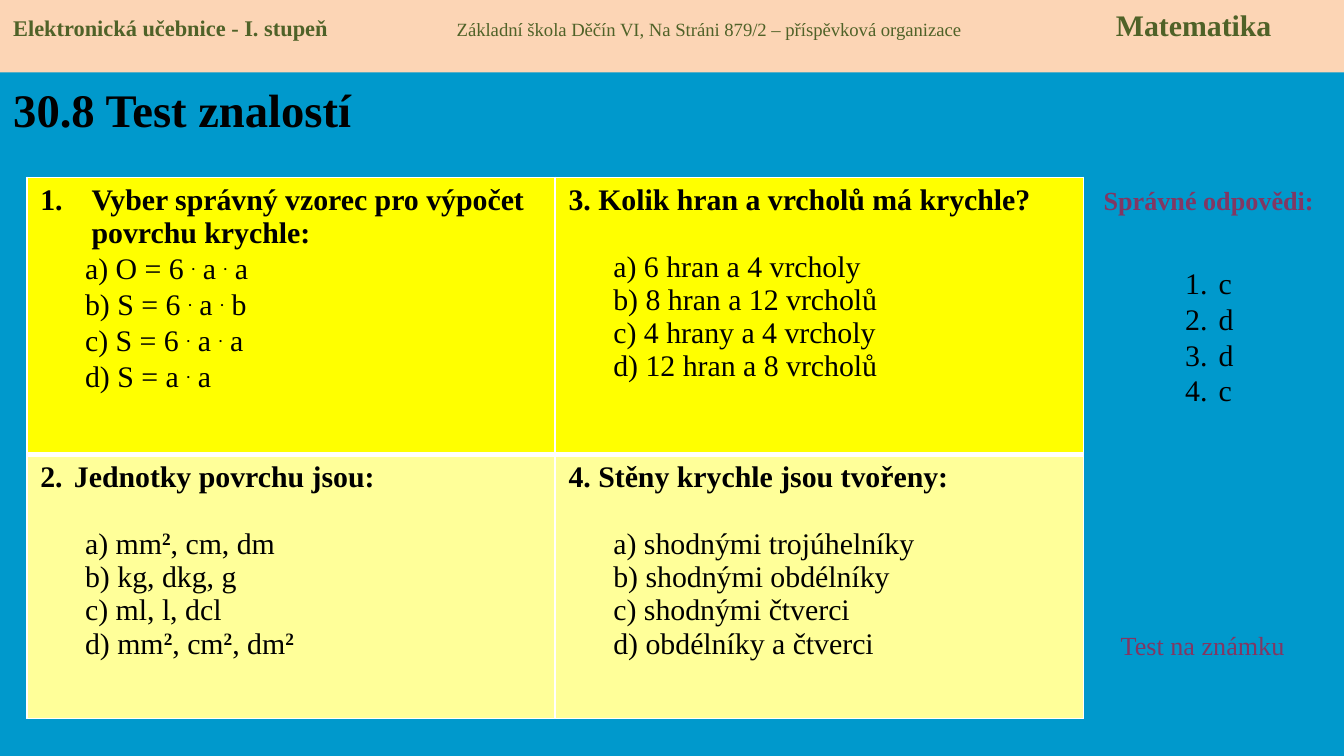
from pptx import Presentation
from pptx.dml.color import RGBColor
from pptx.enum.shapes import MSO_SHAPE
from pptx.enum.text import MSO_ANCHOR, PP_ALIGN
from pptx.oxml.ns import qn
from pptx.util import Pt
from lxml.etree import SubElement

# Content: ^ surrounds raised text
HEADER = [
    ("Elektronická učebnice - I. stupeň", 12, True),
    ("\tZákladní škola Děčín VI, Na Stráni 879/2 – příspěvková organizace", 10, False),
    ("\tMatematika", 16, True),
]
HEADER_TABS = [237.6, 590.8]
# row, column, automatic number, hanging indent, gap before options, question, options
QUESTIONS = [
    (0, 0, 1, 27.5, 0, "Vyber správný vzorec pro výpočet povrchu krychle:",
     ["a) O = 6 ^.^ a ^.^ a", "b) S = 6 ^.^ a ^.^ b", "c) S = 6 ^.^ a ^.^ a", "d) S = a ^.^ a"]),
    (0, 1, None, 0, 18, "3. Kolik hran a vrcholů má krychle?",
     ["a) 6 hran a 4 vrcholy", "b) 8 hran a 12 vrcholů",
      "c) 4 hrany a 4 vrcholy", "d) 12 hran a 8 vrcholů"]),
    (1, 0, 2, 18, 18, "Jednotky povrchu jsou:",
     ["a) mm^2^, cm, dm", "b) kg, dkg, g", "c) ml, l, dcl", "d) mm^2^, cm^2^, dm^2^"]),
    (1, 1, None, 0, 18, "4. Stěny krychle jsou tvořeny:",
     ["a) shodnými trojúhelníky", "b) shodnými obdélníky",
      "c) shodnými čtverci", "d) obdélníky a čtverci"]),
]
ANSWERS = ["c", "d", "d", "c"]
# text, (left, top, width, height), size, bold, colour, alignment
LABELS = [
    ("30.8 Test znalostí", (0, 39.6, 198, 37.4), 25, True, "black", PP_ALIGN.LEFT),
    ("Správné odpovědi:", (579.6, 95, 136, 24.5), 14, True, "plum", PP_ALIGN.CENTER),
    ("Test na známku", (593.3, 333.4, 113, 24.5), 14, False, "plum", PP_ALIGN.LEFT),
]
COLORS = {"background": "0099CC", "header": "FCD5B5", "green": "4F6228", "plum": "813763",
          "black": "000000", "white": "FFFFFF", "row0": "FFFF00", "row1": "FFFF99"}
COL_WIDTH, ROW_HEIGHTS = 283, [148.5, 141.5]


def paint(fill, color):
    fill.solid()
    fill.fore_color.rgb = RGBColor.from_string(COLORS[color])


def style(r, size, bold=False, color="black", name="Times New Roman"):
    r.font.size, r.font.bold, r.font.name = Pt(size), bold, name
    r.font.color.rgb = RGBColor.from_string(COLORS[color])


def add_text(p, text, size, bold=False, color="black"):
    for i, part in enumerate(text.split("^")):
        if not part:
            continue
        r = p.add_run()
        r.text = part
        raised = i % 2 == 1
        style(r, size, bold or part == "2" and raised, color,
              "Lato" if part == "." else "Times New Roman")
        if raised:
            r._r.get_or_add_rPr().set("baseline", "30000")


def indent(p, left, first=0, number=None):
    pPr = p._p.get_or_add_pPr()
    pPr.set("marL", str(Pt(left)))
    pPr.set("indent", str(Pt(first)))
    if number:
        bullet = SubElement(pPr, qn("a:buAutoNum"), type="arabicPeriod")
        if number > 1:
            bullet.set("startAt", str(number))


def set_borders(cell, bottom):
    tcPr = cell._tc.get_or_add_tcPr()
    for i, (side, width) in enumerate([("L", 1), ("R", 1), ("T", 1), ("B", bottom)]):
        ln = SubElement(tcPr, qn(f"a:ln{side}"), w=str(Pt(width)))
        SubElement(SubElement(ln, qn("a:solidFill")), qn("a:srgbClr"), val=COLORS["white"])
        tcPr.remove(ln)
        tcPr.insert(i, ln)


def add_box(s, at):
    tf = s.shapes.add_textbox(*map(Pt, at)).text_frame
    tf.word_wrap = True
    return tf


prs = Presentation()
prs.slide_width, prs.slide_height = Pt(720), Pt(405)
s = prs.slides.add_slide(prs.slide_layouts[6])
paint(s.background.fill, "background")

# Title and side labels
for text, at, size, bold, color, align in LABELS:
    tf = add_box(s, at)
    tf.vertical_anchor = MSO_ANCHOR.MIDDLE
    p = tf.paragraphs[0]
    p.alignment = align
    add_text(p, text, size, bold, color)

# Question table
frame = s.shapes.add_table(2, 2, Pt(14.4), Pt(95), Pt(2 * COL_WIDTH), Pt(sum(ROW_HEIGHTS)))
table = frame.table
table.first_row = table.horz_banding = False
for col in table.columns:
    col.width = Pt(COL_WIDTH)
for row, height in zip(table.rows, ROW_HEIGHTS):
    row.height = Pt(height)
for row, col, number, hang, gap, question, options in QUESTIONS:
    cell = table.cell(row, col)
    paint(cell.fill, f"row{row}")
    set_borders(cell, 3 if row == 0 else 1)
    tf = cell.text_frame
    p = tf.paragraphs[0]
    indent(p, hang, -hang, number)
    add_text(p, question, 16, True)
    for i, option in enumerate(options):
        p = tf.add_paragraph()
        indent(p, 24)
        if i == 0 and gap:
            p.space_before = Pt(gap)
        add_text(p, option, 16)

# Correct answers
tf = add_box(s, (627.8, 138.5, 39.6, 84))
for i, answer in enumerate(ANSWERS):
    p = tf.add_paragraph() if i else tf.paragraphs[0]
    indent(p, 18, -18, 1)
    p.line_spacing = Pt(19.1)
    add_text(p, answer, 16)

# Header band
sp = s.shapes.add_shape(MSO_SHAPE.RECTANGLE, 0, 0, Pt(720), Pt(38.9))
sp.shadow.inherit = False
paint(sp.fill, "header")
sp.line.fill.background()
tf = sp.text_frame
tf.vertical_anchor = MSO_ANCHOR.TOP
p = tf.paragraphs[0]
p.alignment = PP_ALIGN.LEFT
tabs = SubElement(p._p.get_or_add_pPr(), qn("a:tabLst"))
for pos in HEADER_TABS:
    SubElement(tabs, qn("a:tab"), pos=str(Pt(pos)), algn="l")
for text, size, bold in HEADER:
    add_text(p, text, size, bold, "green")

prs.save("out.pptx")
